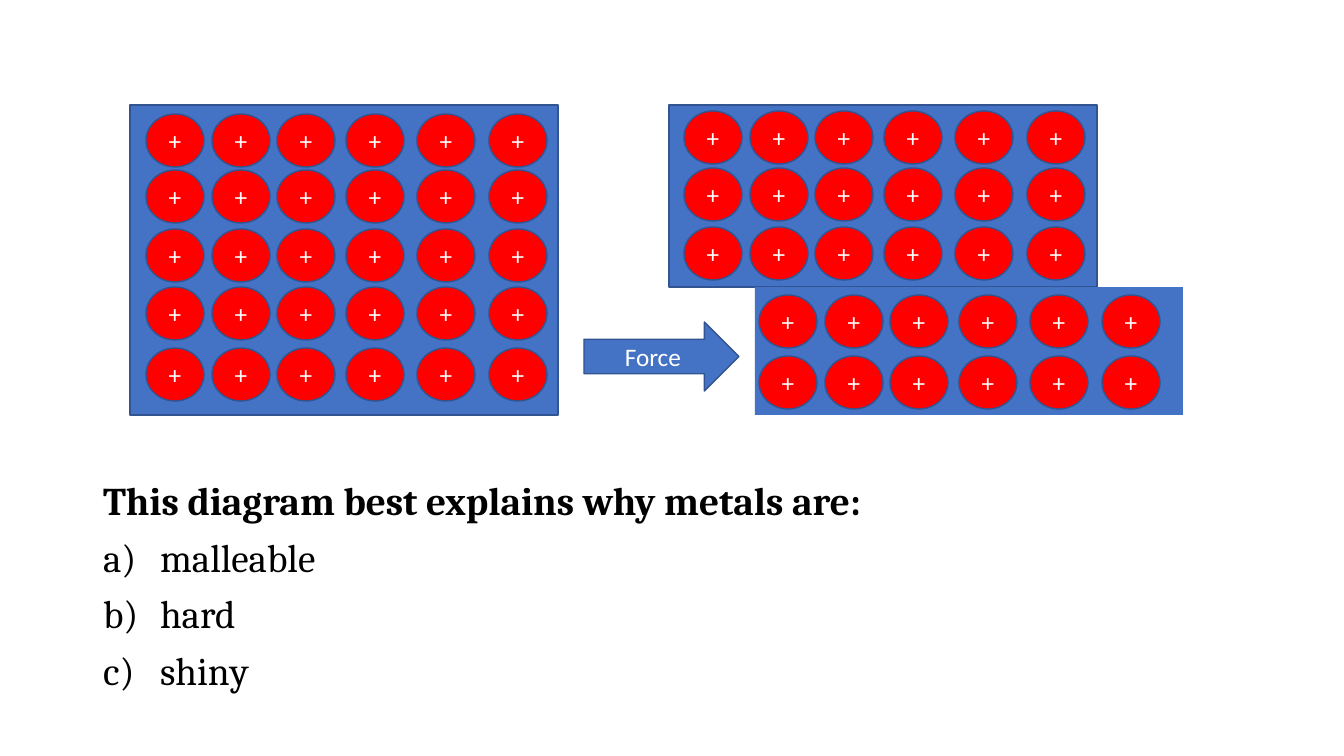
from lxml import etree
from pptx import Presentation
from pptx.dml.color import RGBColor
from pptx.enum.shapes import MSO_SHAPE
from pptx.enum.text import MSO_ANCHOR, MSO_AUTO_SIZE, PP_ALIGN
from pptx.oxml.ns import qn
from pptx.util import Pt

EMU_PER_PX = 914400 / 100.8
RECT, OVAL, ARROW = MSO_SHAPE.RECTANGLE, MSO_SHAPE.OVAL, MSO_SHAPE.RIGHT_ARROW
MIDDLE, TOP = MSO_ANCHOR.MIDDLE, MSO_ANCHOR.TOP
CENTER, LEFT = PP_ALIGN.CENTER, PP_ALIGN.LEFT
NO_AUTOFIT = MSO_AUTO_SIZE.NONE

BLUE = RGBColor(0x44, 0x72, 0xC4)
OUTLINE = RGBColor(0x32, 0x54, 0x91)
RED = RGBColor(0xFF, 0x00, 0x00)
WHITE = RGBColor(0xFF, 0xFF, 0xFF)
BLACK = RGBColor(0x00, 0x00, 0x00)

ION_W, ION_H = 58, 53
ION_COLUMNS = (0, 66, 131, 200, 271, 343)
SLAB_W = 428
LIST_INDENT = 57


def px(n):
    return round(n * EMU_PER_PX)


class SlideBuilder:
    label_font, label_size = "Calibri", Pt(18)
    body_font, body_size = "Cambria", Pt(28)

    def __init__(self, slide):
        self.slide = slide

    def style_run(self, r, font, size, color, bold=False):
        r.font.name = font
        r.font.size = size
        r.font.color.rgb = color
        r.font.bold = bold

    def shape(self, kind, x, y, w, h, fill, text="", outlined=True):
        sp = self.slide.shapes.add_shape(kind, px(x), px(y), px(w), px(h))
        sp.shadow.inherit = False
        sp.fill.solid()
        sp.fill.fore_color.rgb = fill
        if outlined:
            sp.line.color.rgb = OUTLINE
            sp.line.width = Pt(1)
        else:
            sp.line.fill.background()
        if text:
            tf = sp.text_frame
            tf.text = text
            tf.vertical_anchor = MIDDLE
            p = tf.paragraphs[0]
            p.alignment = CENTER
            self.style_run(p.runs[0], self.label_font, self.label_size, WHITE)

    def ions(self, x, rows):
        """Place a lattice of positive ions, one row at each y in rows."""
        for dx in ION_COLUMNS:
            for y in rows:
                self.shape(OVAL, x + dx, y, ION_W, ION_H, RED, "+")

    def question(self, x, y, w, h, prompt, answers):
        """Fill the body placeholder with a prompt and lettered answers."""
        sp = self.slide.placeholders[1]
        sp.left, sp.top, sp.width, sp.height = px(x), px(y), px(w), px(h)
        tf = sp.text_frame
        tf.word_wrap = True
        tf.auto_size = NO_AUTOFIT
        tf.vertical_anchor = TOP
        tf.text = "\n".join([prompt, *answers])
        for i, p in enumerate(tf.paragraphs):
            is_answer = i > 0
            p.alignment = LEFT
            p.line_spacing = 0.9
            p.space_before = Pt(10 if is_answer else 0)
            self.style_run(p.runs[0], self.body_font, self.body_size, BLACK, not is_answer)
            self.bullet(p, is_answer)

    def bullet(self, p, lettered):
        pPr = p._p.get_or_add_pPr()
        indent = px(LIST_INDENT) if lettered else 0
        pPr.set("marL", str(indent))
        pPr.set("indent", str(-indent))
        if lettered:
            etree.SubElement(pPr, qn("a:buFont"), typeface=self.body_font)
            etree.SubElement(pPr, qn("a:buAutoNum"), type="alphaLcParenR")
        else:
            etree.SubElement(pPr, qn("a:buNone"))


def main():
    prs = Presentation()
    prs.slide_width, prs.slide_height = px(1344), px(756)
    s = prs.slides.add_slide(prs.slide_layouts[1])
    title = s.shapes.title.element
    title.getparent().remove(title)

    b = SlideBuilder(s)
    b.shape(RECT, 130, 105, SLAB_W, 310, BLUE)
    b.ions(146, (114, 170, 229, 287, 348))

    b.shape(RECT, 669, 105, SLAB_W, 182, BLUE)
    b.shape(RECT, 755, 287, SLAB_W, 128, BLUE, outlined=False)
    b.ions(684, (111, 168, 227))
    b.ions(759, (295, 356))

    b.shape(ARROW, 584, 322, 155, 69, BLUE, "Force")
    b.question(93, 477, 1129, 270, "This diagram best explains why metals are:",
               ("malleable", "hard", "shiny"))
    prs.save("out.pptx")


if __name__ == "__main__":
    main()
